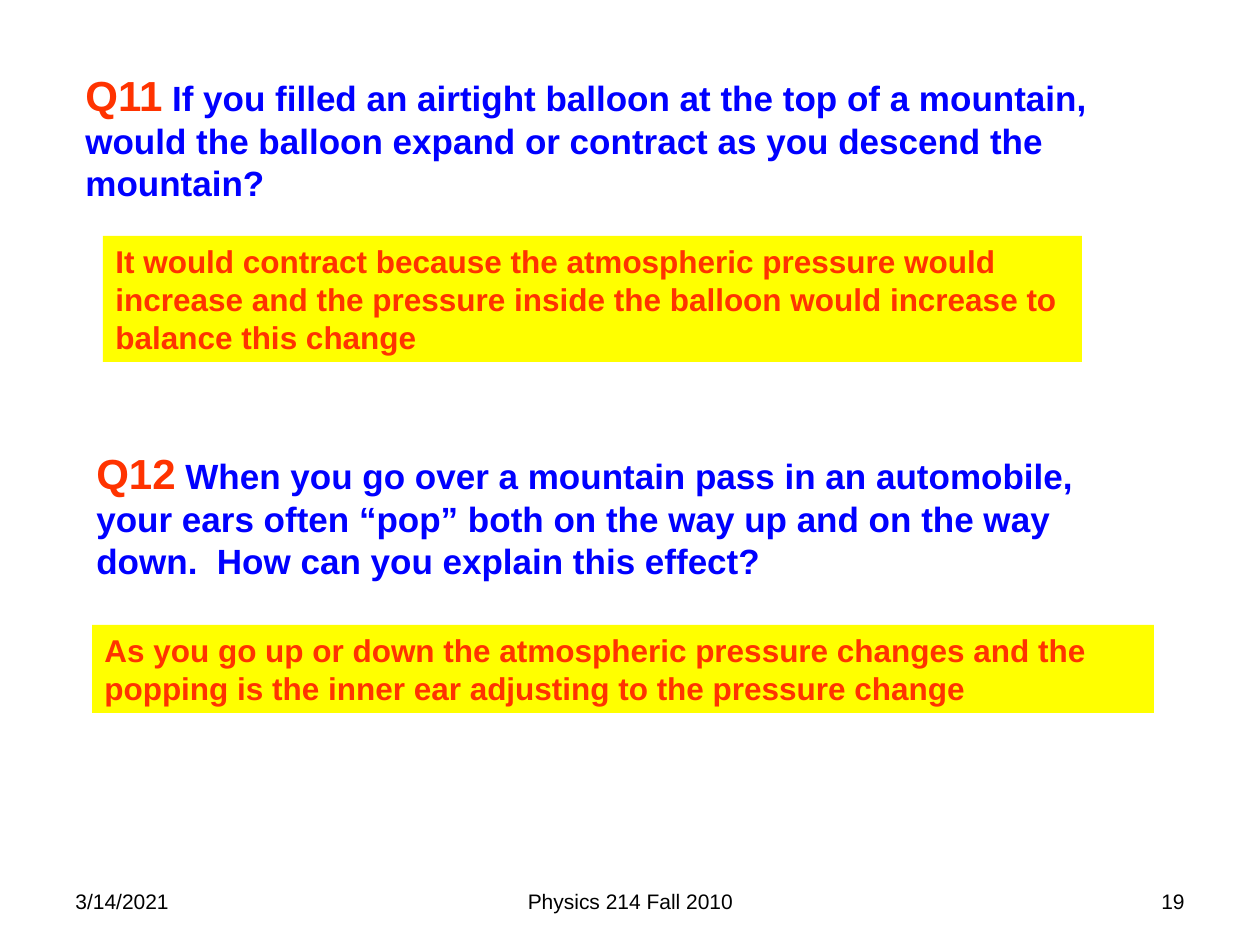
from lxml import etree
from pptx import Presentation
from pptx import util as u
from pptx.dml.color import RGBColor
from pptx.enum import shapes, text
from pptx.oxml import ns

PX = u.Inches(1) / 126
BLACK = RGBColor(0x00, 0x00, 0x00)
RED = RGBColor(0xFF, 0x33, 0x00)
BLUE = RGBColor(0x00, 0x00, 0xFF)
YELLOW = RGBColor(0xFF, 0xFF, 0x00)

prs = Presentation()
prs.slide_width, prs.slide_height = u.Inches(10), u.Inches(7.5)
s = prs.slides.add_slide(prs.slide_layouts[6])


def fill_text(sp, runs, align=text.PP_ALIGN.LEFT, anchor=text.MSO_ANCHOR.TOP):
    """Write one wrapped paragraph from (words, size, colour, bold) runs."""
    tf = sp.text_frame
    tf.word_wrap = True
    tf.vertical_anchor = anchor
    p = tf.paragraphs[0]
    p.alignment = align
    for words, size, color, bold in runs:
        r = p.add_run()
        r.text = words
        r.font.color.rgb = color
        for name, value in {"name": "Arial", "size": u.Pt(size), "bold": bold}.items():
            setattr(r.font, name, value)
    return tf


def box(*lengths):
    return [round(n * PX) for n in lengths]


footers = [
    (63, 294, "3/14/2021", text.PP_ALIGN.LEFT),
    (431, 399, "Physics 214 Fall 2010", text.PP_ALIGN.CENTER),
    (903, 294, "19", text.PP_ALIGN.RIGHT),
]
for left, width, words, align in footers:
    sp = s.shapes.add_textbox(*box(left, 876, width, 50))
    fill_text(sp, [(words, 12, BLACK, False)], align, text.MSO_ANCHOR.MIDDLE)

questions = [
    (73, 63, 1124, "Q11", " If you filled an airtight balloon at the top of a mountain, "
     "would the balloon expand or contract as you descend the mountain?"),
    (84, 441, 1061, "Q12", " When you go over a mountain pass in an automobile, "
     "your ears often “pop” both on the way up and on the way down.  "
     "How can you explain this effect?"),
]
for left, top, width, number, question in questions:
    sp = s.shapes.add_textbox(*box(left, top, width, 147))
    tf = fill_text(sp, [(number, 24, RED, True), (question, 20, BLUE, True)])
    tf.auto_size = text.MSO_AUTO_SIZE.SHAPE_TO_FIT_TEXT
    # Spacing relative to the line height needs XML
    before = etree.SubElement(tf.paragraphs[0]._p.get_or_add_pPr(), ns.qn("a:spcBef"))
    etree.SubElement(before, ns.qn("a:spcPct"), val="50000")

answers = [
    (103, 236, 979, 126, "It would contract because the atmospheric pressure would "
     "increase and the pressure inside the balloon would increase to balance this change"),
    (92, 625, 1062, 88, "As you go up or down the atmospheric pressure changes and the "
     "popping is the inner ear adjusting to the pressure change"),
]
for left, top, width, height, answer in answers:
    sp = s.shapes.add_shape(shapes.MSO_SHAPE.RECTANGLE, *box(left, top, width, height))
    sp.shadow.inherit = False
    sp.fill.solid()
    sp.fill.fore_color.rgb = YELLOW
    sp.line.fill.background()
    tf = fill_text(sp, [(answer, 18, RED, True)])
    tf.auto_size = text.MSO_AUTO_SIZE.SHAPE_TO_FIT_TEXT

prs.save("out.pptx")
